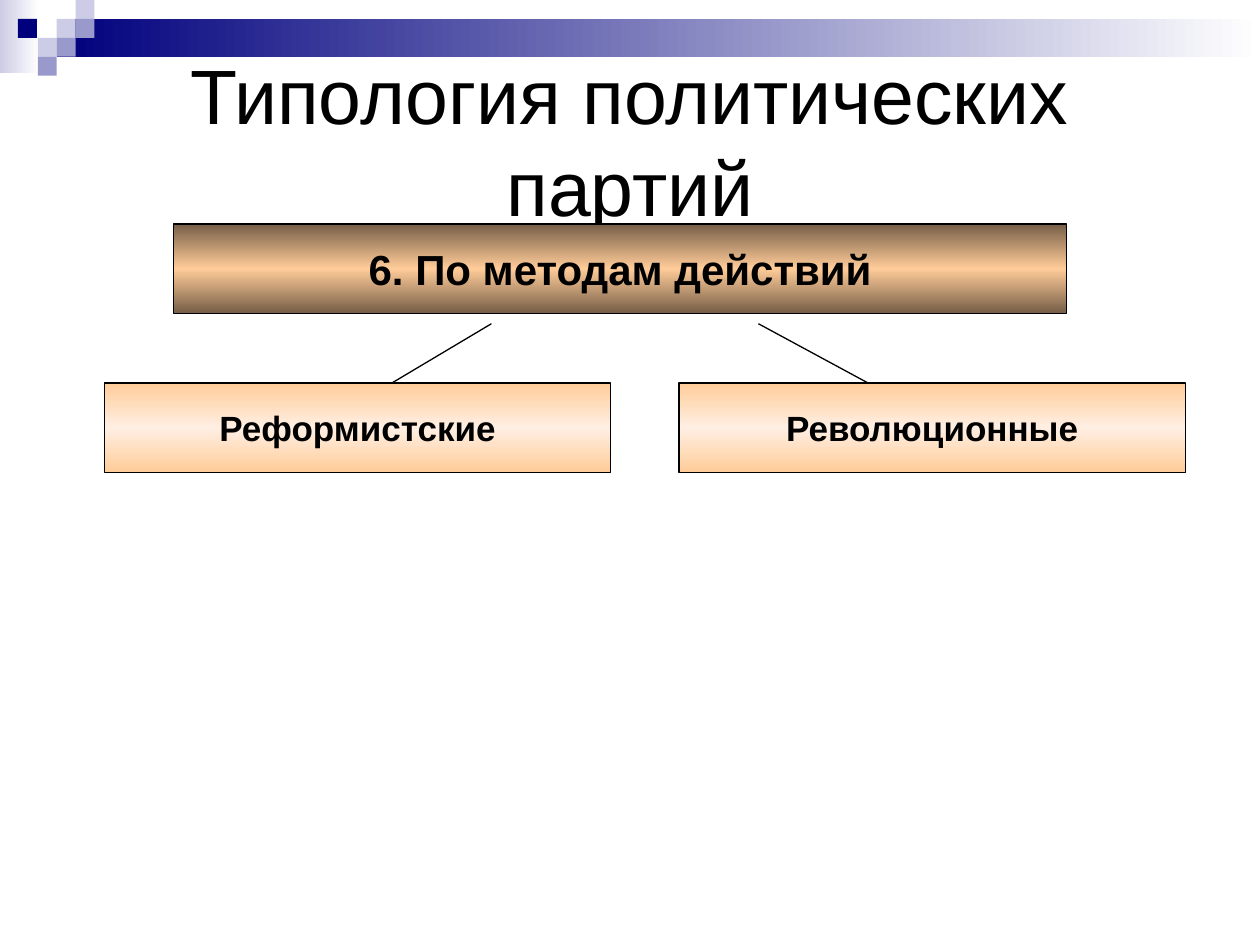
import lxml.etree
import pptx
import pptx.dml.color
import pptx.enum.shapes
import pptx.enum.text
import pptx.oxml.ns
import pptx.util

Pt = pptx.util.Pt
qn = pptx.oxml.ns.qn

# Content
TITLE = "Типология политических партий"
CRITERION = "6. По методам действий"
PARTY_TYPES = ["Реформистские", "Революционные"]

# Colours
NAVY, MID_BLUE, PALE_BLUE, WHITE, BLACK = "00007D", "9999CC", "CCCCE6", "FFFFFF", "000000"
CRITERION_COLOURS = ["765E47", "FFCC99", "765E47"]
TYPE_COLOURS = ["FFCC99", "FFEFE3", "FFCC99"]

# Corner ornament: column, row and colour of each square
CELL = 10.8
SQUARES = [
    (3, 1, PALE_BLUE), (4, 0, PALE_BLUE), (4, 1, MID_BLUE), (2, 2, PALE_BLUE),
    (0.95, 1, NAVY), (3, 2, MID_BLUE), (2, 3, MID_BLUE),
]

# Layout, in points
FONT = "Arial"
BOX_HEIGHT = 51
TYPE_LEFT, TYPE_TOP, TYPE_WIDTH, TYPE_STEP = 59.6, 218.9, 289.4, 328.4
BRANCHES = [(280.8, 223.9), (433.4, 496.1)]  # x at the top and at the bottom
BRANCH_TOP = 185


def colour(value):
    return pptx.dml.color.RGBColor.from_string(value)


def fill_gradient(shape, colours, angle):
    shape.fill.gradient()
    shape.fill.gradient_angle = angle
    stops = shape._element.spPr.find(qn("a:gradFill")).find(qn("a:gsLst"))
    for stop in list(stops):
        stops.remove(stop)
    for index, value in enumerate(colours):
        position = index * 100000 // (len(colours) - 1)
        stop = lxml.etree.SubElement(stops, qn("a:gs"), pos=str(position))
        lxml.etree.SubElement(stop, qn("a:srgbClr"), val=value)


def add_rectangle(page, left, top, width, height, colours, angle=0):
    shape = page.shapes.add_shape(
        pptx.enum.shapes.MSO_SHAPE.RECTANGLE, Pt(left), Pt(top), Pt(width), Pt(height))
    shape.shadow.inherit = False
    shape.line.fill.background()
    if len(colours) == 1:
        shape.fill.solid()
        shape.fill.fore_color.rgb = colour(colours[0])
    else:
        fill_gradient(shape, colours, angle)
    return shape


def set_text(shape, text, size, bold, wrap):
    frame = shape.text_frame
    frame.word_wrap = wrap
    frame.vertical_anchor = pptx.enum.text.MSO_ANCHOR.MIDDLE
    para = frame.paragraphs[0]
    para.text = text
    para.alignment = pptx.enum.text.PP_ALIGN.CENTER
    para.font.name = FONT
    para.font.size = Pt(size)
    para.font.bold = bold
    para.font.color.rgb = colour(BLACK)


def set_outline(shape):
    shape.line.color.rgb = colour(BLACK)
    shape.line.width = Pt(0.75)


def add_label_box(page, left, top, width, text, size, colours):
    box = add_rectangle(page, left, top, width, BOX_HEIGHT, colours, angle=270)
    set_outline(box)
    set_text(box, text, size, bold=True, wrap=False)


def add_branch(page, top_x, bottom_x):
    branch = page.shapes.add_connector(
        pptx.enum.shapes.MSO_CONNECTOR.STRAIGHT,
        Pt(top_x), Pt(BRANCH_TOP), Pt(bottom_x), Pt(TYPE_TOP))
    set_outline(branch)
    lxml.etree.SubElement(branch._element.spPr, qn("a:effectLst"))


def main():
    deck = pptx.Presentation()
    deck.slide_width, deck.slide_height = Pt(720), Pt(540)
    page = deck.slides.add_slide(deck.slide_layouts[6])

    # Header band and corner ornament
    add_rectangle(page, 0, 0, 22.3, 41.8, [PALE_BLUE, WHITE])
    add_rectangle(page, 3 * CELL, CELL, 720 - 3 * CELL, 2 * CELL, [NAVY, WHITE])
    for column, row, value in SQUARES:
        add_rectangle(page, column * CELL, row * CELL, CELL, CELL, [value])

    # Title
    title = page.shapes.add_textbox(Pt(36), Pt(36), Pt(648), Pt(88))
    set_text(title, TITLE, 44, bold=False, wrap=True)

    # Criterion and the party types under it
    add_label_box(page, 99.2, 128, 510.4, CRITERION, 24, CRITERION_COLOURS)
    for index, text in enumerate(PARTY_TYPES):
        add_label_box(page, TYPE_LEFT + index * TYPE_STEP, TYPE_TOP, TYPE_WIDTH,
                      text, 20, TYPE_COLOURS)
    for top_x, bottom_x in BRANCHES:
        add_branch(page, top_x, bottom_x)

    deck.save("out.pptx")


if __name__ == "__main__":
    main()
